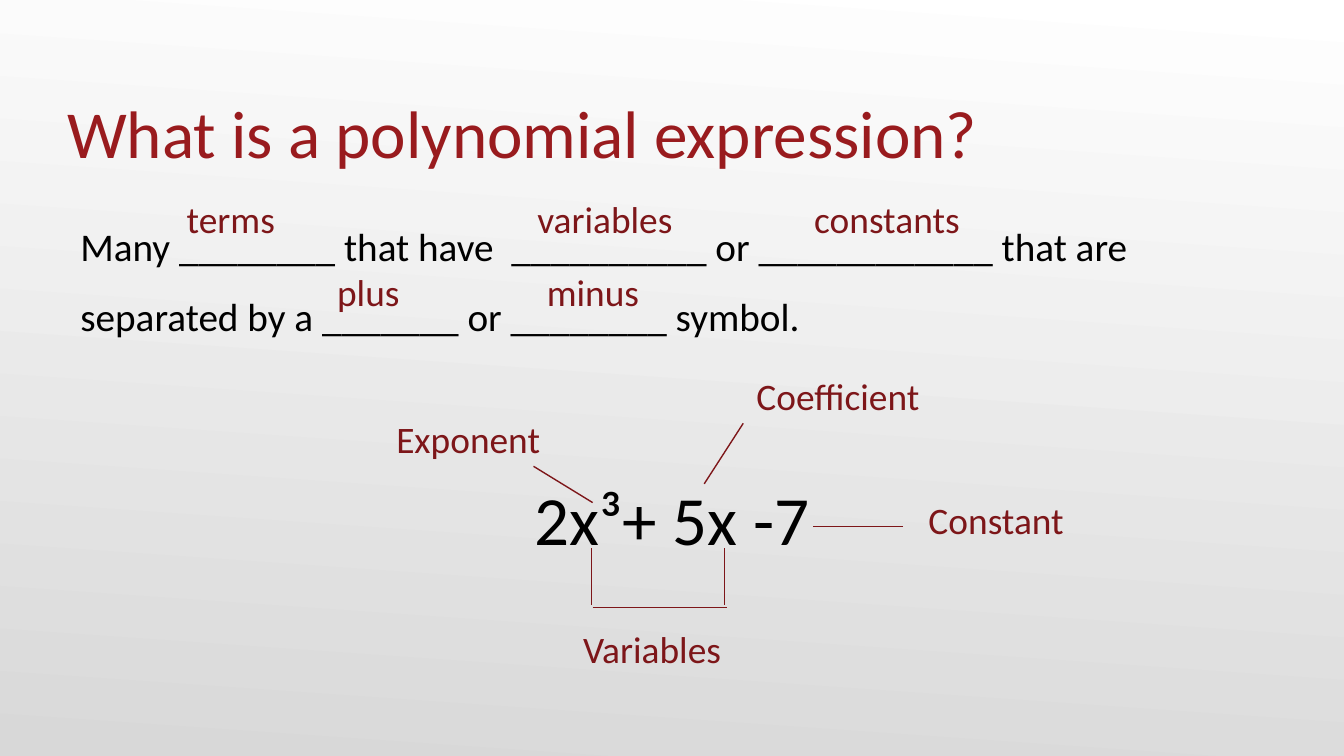
from pptx import Presentation
from pptx.dml.color import RGBColor
from pptx.enum.shapes import MSO_CONNECTOR
from pptx.enum.text import MSO_ANCHOR, PP_ALIGN
from pptx.util import Emu, Pt
from lxml.etree import SubElement
from pptx.oxml.ns import qn

PX = 9144  # 100 px to the inch
SLIDE_WIDTH = 1000
FONT = "Calibri"
BLACK, TITLE_RED, LABEL_RED = "000000", "991B1E", "7D1619"

TITLE = "What is a polynomial expression?"
DEFINITION = ("Many ________ that have  __________ or ____________ that are "
              "separated by a _______ or ________ symbol.")
EQUATION = "2x³+ 5x -7"

# text, left, top, width
LABELS = [
    ("terms", 129, 136, 112),
    ("variables", 390, 136, 126),
    ("constants", 596, 136, 150),
    ("plus", 241, 190, 112),
    ("minus", 397, 190, 112),
    ("Exponent", 285, 300, 141),
    ("Coefficient", 553, 268, 171),
    ("Constant", 681, 360, 171),
    ("Variables", 424, 456, 133),
]
LABEL_HEIGHT = 47

# x and y of the start, x and y of the end
POINTERS = [
    (397, 347, 441, 374),  # exponent
    (553, 315, 524, 360),  # coefficient
    (672, 392, 605, 392),  # constant
    (440, 408, 440, 450),  # first variable
    (539, 408, 539, 450),  # second variable
    (441, 452, 541, 452),  # bar under both variables
]


def px(*lengths):
    return [Emu(length * PX) for length in lengths]


def rgb(color):
    return RGBColor.from_string(color)


def style(paragraph, text, size, color):
    paragraph.text = text
    font = paragraph.font
    font.name, font.size, font.color.rgb = FONT, Pt(size), rgb(color)


def add_frame(slide, box, insets, anchor=MSO_ANCHOR.TOP):
    """Add a wrapping text box; insets run left, top, right, bottom."""
    frame = slide.shapes.add_textbox(*px(*box)).text_frame
    frame.word_wrap = True
    frame.vertical_anchor = anchor
    (frame.margin_left, frame.margin_top,
     frame.margin_right, frame.margin_bottom) = px(*insets)
    return frame


def add_pointer(slide, ends):
    pointer = slide.shapes.add_connector(MSO_CONNECTOR.STRAIGHT, *px(*ends))
    pointer.line.color.rgb = rgb(LABEL_RED)
    pointer.line.width = Pt(0.75)
    SubElement(pointer._element.spPr, qn("a:effectLst"))


def main():
    deck = Presentation()
    deck.slide_width = Emu(SLIDE_WIDTH * PX)
    deck.slide_height = Emu(deck.slide_width * 9 // 16)
    slide = deck.slides.add_slide(deck.slide_layouts[6])

    backdrop = slide.background.fill
    backdrop.gradient()
    backdrop.gradient_angle = 266
    for stop, color in zip(backdrop.gradient_stops, ("FFFFFF", "D8D8D8")):
        stop.color.rgb = rgb(color)

    body = add_frame(slide, (50, 143, 900, 376), (10, 5, 10, 5))
    definition = body.paragraphs[0]
    style(definition, DEFINITION, 21, BLACK)
    definition.line_spacing = 1.5
    equation = body.add_paragraph()
    style(equation, EQUATION, 37, BLACK)
    equation.alignment = PP_ALIGN.CENTER
    equation.space_before = Pt(73)

    title = add_frame(slide, (50, 34, 900, 94), (0, 5, 0, 0), MSO_ANCHOR.BOTTOM)
    style(title.paragraphs[0], TITLE, 36, TITLE_RED)

    for text, left, top, width in LABELS:
        label = add_frame(slide, (left, top, width, LABEL_HEIGHT), [10] * 4)
        style(label.paragraphs[0], text, 20, LABEL_RED)

    for ends in POINTERS:
        add_pointer(slide, ends)

    deck.save("out.pptx")


if __name__ == "__main__":
    main()
